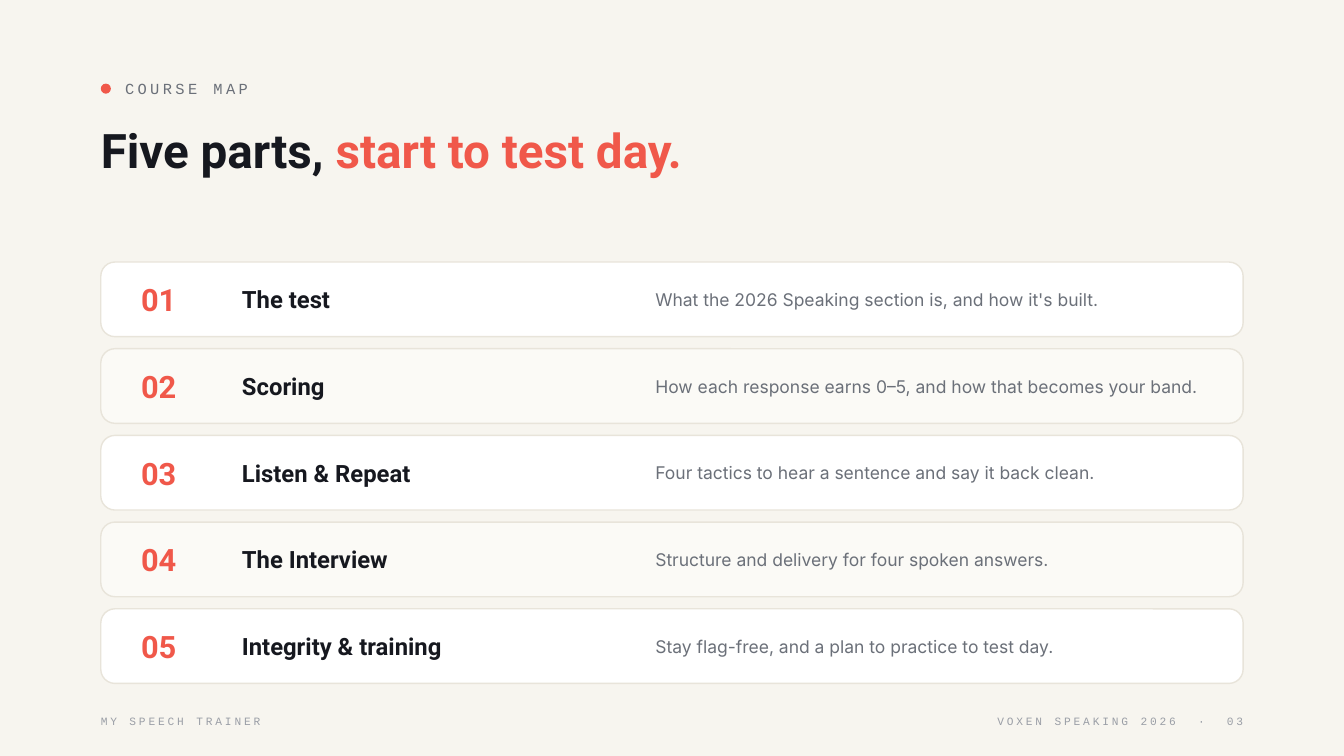
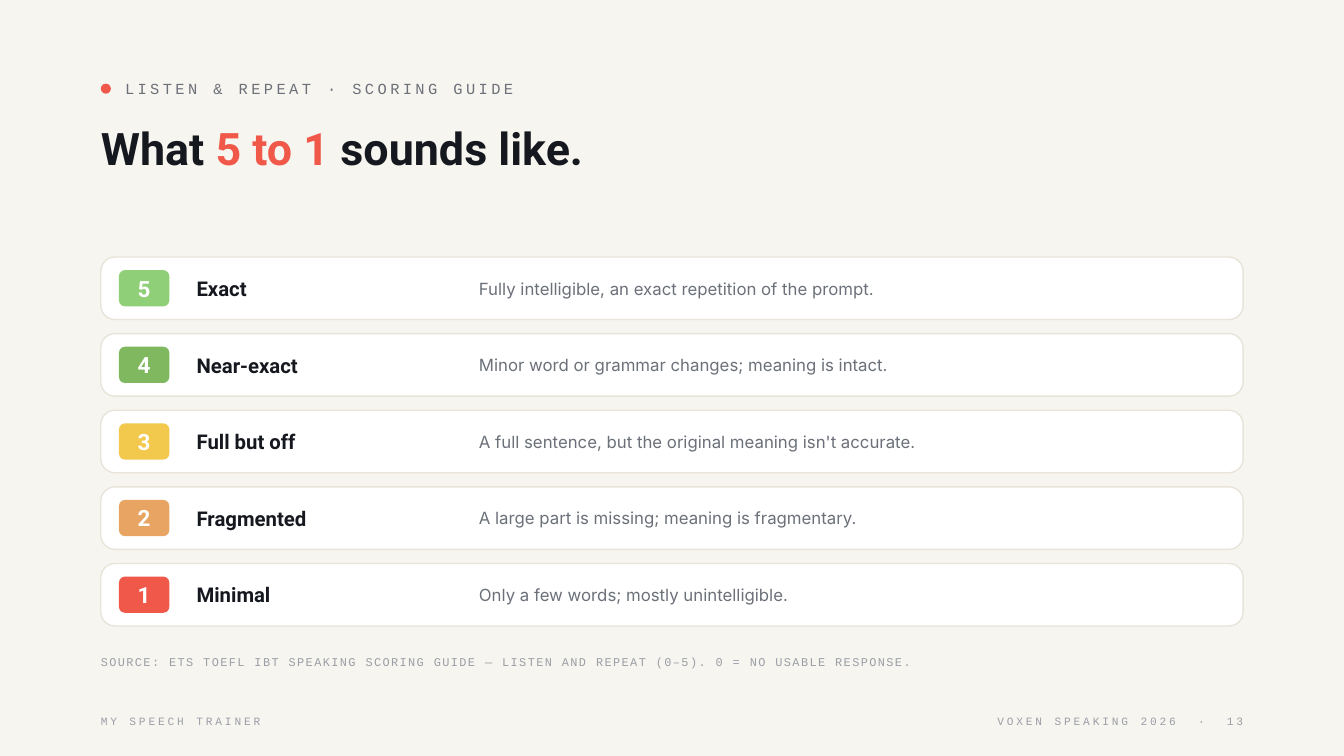
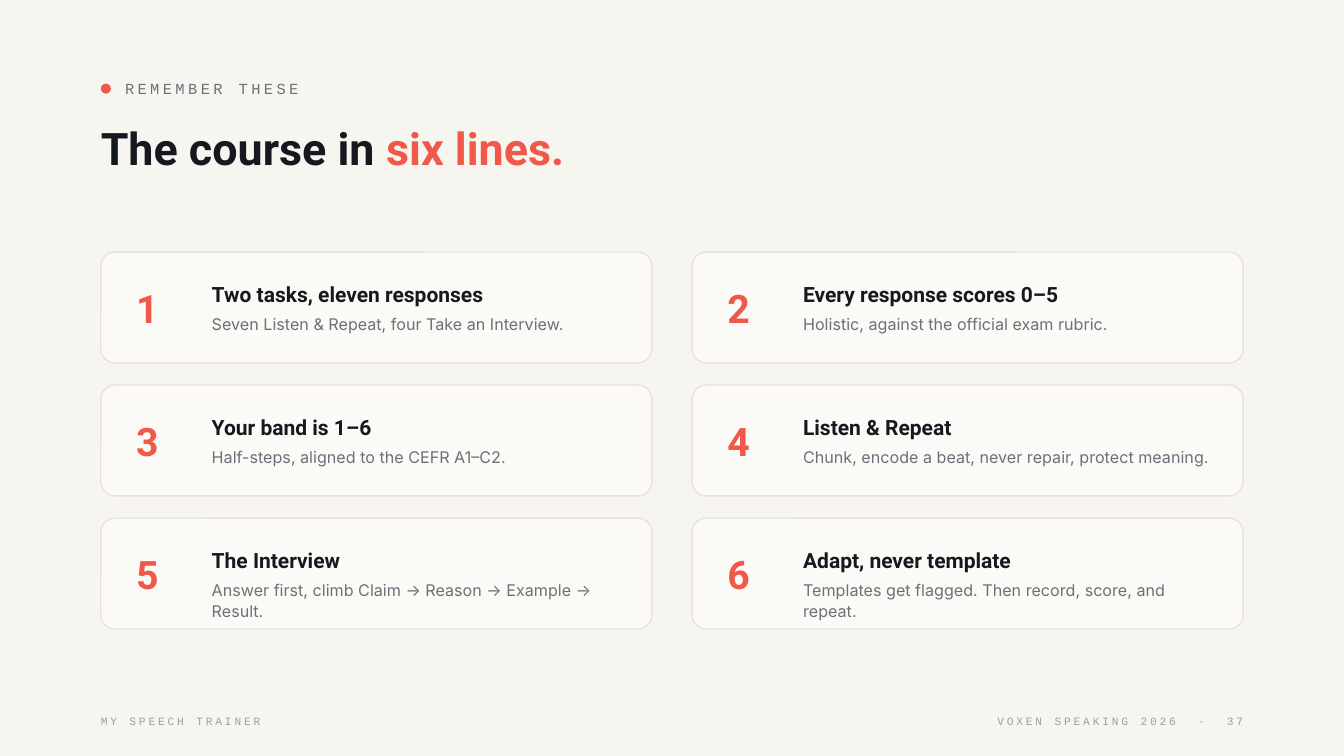
from dataclasses import dataclass, replace

from pptx import Presentation
from pptx.dml.color import RGBColor
from pptx.enum.shapes import MSO_SHAPE
from pptx.enum.text import MSO_ANCHOR, PP_ALIGN
from pptx.util import Inches, Pt

ELLIPSE, ROUNDED = MSO_SHAPE.OVAL, MSO_SHAPE.ROUNDED_RECTANGLE
TOP, MIDDLE = MSO_ANCHOR.TOP, MSO_ANCHOR.MIDDLE
LEFT, CENTER, RIGHT = PP_ALIGN.LEFT, PP_ALIGN.CENTER, PP_ALIGN.RIGHT

SLIDE_WIDTH, SLIDE_HEIGHT = 13.33, 7.5
MARGIN = 1
CONTENT_WIDTH = SLIDE_WIDTH - 2 * MARGIN
CARD_RADIUS, BADGE_RADIUS = 0.14, 0.06

PAPER, WHITE, CREAM, BORDER = "F7F5EF", "FFFFFF", "FBFAF6", "E8E4DA"
INK, GRAY, PALE_GRAY, CORAL = "16181F", "6B7079", "9A9EA6", "F0584A"


@dataclass(frozen=True)
class Style:
    font: str
    size: float
    color: str
    bold: bool = False
    spacing: float = 0


def heading(size, color=INK):
    return Style("Roboto", size, color, bold=True)


def body(size):
    return Style("Inter", size, GRAY)


def mono(size, color, spacing):
    return Style("Courier New", size, color, spacing=spacing)


EYEBROW = mono(11, GRAY, 2.4)
FOOTER = mono(8, PALE_GRAY, 2)
FOOTER_GAP = replace(FOOTER, spacing=8.8)
SOURCE = mono(8.5, PALE_GRAY, 1)

COURSE_PARTS = [
    ("The test", "What the 2026 Speaking section is, and how it's built."),
    ("Scoring", "How each response earns 0–5, and how that becomes your band."),
    ("Listen & Repeat", "Four tactics to hear a sentence and say it back clean."),
    ("The Interview", "Structure and delivery for four spoken answers."),
    ("Integrity & training", "Stay flag-free, and a plan to practice to test day."),
]
SCORES = [
    ("5", "8FCF77", "Exact", "Fully intelligible, an exact repetition of the prompt."),
    ("4", "7FB85F", "Near-exact", "Minor word or grammar changes; meaning is intact."),
    ("3", "F2C94C", "Full but off", "A full sentence, but the original meaning isn't accurate."),
    ("2", "E8A463", "Fragmented", "A large part is missing; meaning is fragmentary."),
    ("1", CORAL, "Minimal", "Only a few words; mostly unintelligible."),
]
REMINDERS = [
    ("Two tasks, eleven responses", "Seven Listen & Repeat, four Take an Interview."),
    ("Every response scores 0–5", "Holistic, against the official exam rubric."),
    ("Your band is 1–6", "Half-steps, aligned to the CEFR A1–C2."),
    ("Listen & Repeat", "Chunk, encode a beat, never repair, protect meaning."),
    ("The Interview", "Answer first, climb Claim → Reason → Example → Result."),
    ("Adapt, never template", "Templates get flagged. Then record, score, and repeat."),
]


def rgb(color):
    return RGBColor.from_string(color)


def write(shape, runs, align=LEFT, anchor=MIDDLE, line_spacing=None):
    """Fill a shape with one paragraph of (text, style) runs."""
    frame = shape.text_frame
    frame.word_wrap = True
    frame.vertical_anchor = anchor
    frame.margin_left = frame.margin_top = frame.margin_right = frame.margin_bottom = 0
    paragraph = frame.paragraphs[0]
    paragraph.alignment = align
    if line_spacing:
        paragraph.line_spacing = line_spacing
    for text, style in runs:
        run = paragraph.add_run()
        run.text = text
        run.font.name = style.font
        run.font.size = Pt(style.size)
        run.font.bold = style.bold
        run.font.color.rgb = rgb(style.color)
        if style.spacing:
            run.font._element.set("spc", str(round(style.spacing * 100)))


def add_runs(slide, box, runs, **layout):
    write(slide.shapes.add_textbox(*map(Inches, box)), runs, **layout)


def add_text(slide, box, text, style, **layout):
    add_runs(slide, box, [(text, style)], **layout)


def add_filled(slide, kind, box, fill, line=None, radius=None):
    shape = slide.shapes.add_shape(kind, *map(Inches, box))
    shape.shadow.inherit = False
    shape.fill.solid()
    shape.fill.fore_color.rgb = rgb(fill)
    if line:
        shape.line.color.rgb = rgb(line)
        shape.line.width = Pt(1)
    else:
        shape.line.fill.background()
    if radius:
        shape.adjustments[0] = radius / min(box[2:])
    return shape


def add_card(slide, box, fill):
    add_filled(slide, ROUNDED, box, fill, BORDER, CARD_RADIUS)


def add_base_slide(presentation, number, eyebrow, title, title_size):
    """Add a slide with its eyebrow, its title of (text, color) parts and its footer."""
    slide = presentation.slides.add_slide(presentation.slide_layouts[6])
    add_filled(slide, ELLIPSE, (MARGIN, 0.83, 0.1, 0.1), CORAL)
    add_text(slide, (MARGIN + 0.24, 0.73, 10, 0.3), eyebrow, EYEBROW)
    title_runs = [(text, heading(title_size, color)) for text, color in title]
    add_runs(slide, (MARGIN, 1.2, CONTENT_WIDTH, 1), title_runs, anchor=TOP)

    footer_top, footer_width = SLIDE_HEIGHT - 0.5, 6
    add_text(slide, (MARGIN, footer_top, footer_width, 0.3), "MY SPEECH TRAINER", FOOTER)
    footer_runs = [("VOXEN SPEAKING 2026", FOOTER), (" ", FOOTER_GAP), ("·", FOOTER),
                   (" ", FOOTER_GAP), (f"{number:02}", FOOTER)]
    footer_left = SLIDE_WIDTH - MARGIN - footer_width
    add_runs(slide, (footer_left, footer_top, footer_width, 0.3), footer_runs, align=RIGHT)
    return slide


def add_course_map(presentation):
    slide = add_base_slide(presentation, 3, "COURSE MAP",
                           [("Five parts, ", INK), ("start to test day.", CORAL)], 34)
    height, gap = 0.74, 0.12
    for index, (name, summary) in enumerate(COURSE_PARTS):
        top = 2.6 + index * (height + gap)
        add_card(slide, (MARGIN, top, CONTENT_WIDTH, height), CREAM if index % 2 else WHITE)
        add_text(slide, (1.4, top, 0.9, height), f"{index + 1:02}", heading(22, CORAL))
        add_text(slide, (2.4, top, 4, height), name, heading(17))
        add_text(slide, (6.5, top, 5.43, height), summary, body(12.5))


def add_scoring_guide(presentation):
    slide = add_base_slide(presentation, 13, "LISTEN & REPEAT · SCORING GUIDE",
                           [("What ", INK), ("5 to 1 ", CORAL), ("sounds like.", INK)], 32)
    height, gap, badge_height = 0.62, 0.14, 0.36
    for index, (score, color, name, meaning) in enumerate(SCORES):
        top = 2.55 + index * (height + gap)
        add_card(slide, (MARGIN, top, CONTENT_WIDTH, height), WHITE)
        badge_box = (1.18, top + (height - badge_height) / 2, 0.5, badge_height)
        badge = add_filled(slide, ROUNDED, badge_box, color, radius=BADGE_RADIUS)
        write(badge, [(score, heading(16, WHITE))], align=CENTER)
        add_text(slide, (1.95, top, 2.7, height), name, heading(14.5))
        add_text(slide, (4.75, top, 7.33, height), meaning, body(12))
    add_text(slide, (MARGIN, 6.42, CONTENT_WIDTH, 0.3),
             "SOURCE: ETS TOEFL IBT SPEAKING SCORING GUIDE — LISTEN AND REPEAT (0–5). "
             "0 = NO USABLE RESPONSE.", SOURCE)


def add_reminders(presentation):
    slide = add_base_slide(presentation, 37, "REMEMBER THESE",
                           [("The course in ", INK), ("six lines.", CORAL)], 32)
    columns, column_gap = 2, 0.4
    height, row_gap = 1.1, 0.22
    width = (CONTENT_WIDTH - column_gap * (columns - 1)) / columns
    for index, (name, detail) in enumerate(REMINDERS):
        row, column = divmod(index, columns)
        left = MARGIN + column * (width + column_gap)
        top = 2.5 + row * (height + row_gap)
        text_left, text_width = left + 1.1, width - 1.4
        add_card(slide, (left, top, width, height), CREAM)
        add_text(slide, (left + 0.35, top + 0.2, 0.7, 0.7), str(index + 1), heading(28, CORAL))
        add_text(slide, (text_left, top + 0.22, text_width, 0.4), name, heading(15))
        add_text(slide, (text_left, top + 0.6, text_width, 0.4), detail, body(11.5),
                 anchor=TOP, line_spacing=1.1)


def main():
    presentation = Presentation()
    presentation.slide_width = Inches(SLIDE_WIDTH)
    presentation.slide_height = Inches(SLIDE_HEIGHT)
    background = presentation.slide_master.background.fill
    background.solid()
    background.fore_color.rgb = rgb(PAPER)
    add_course_map(presentation)
    add_scoring_guide(presentation)
    add_reminders(presentation)
    presentation.save("out.pptx")


if __name__ == "__main__":
    main()
